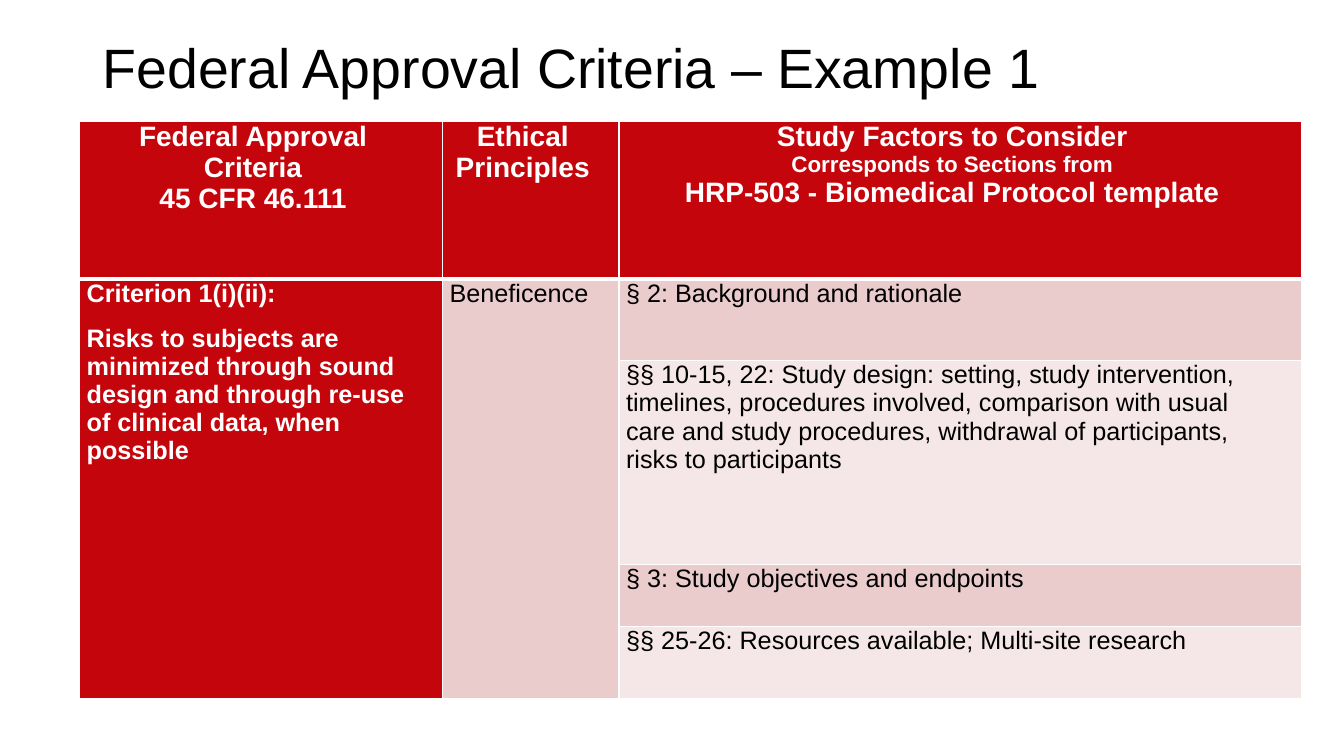
from pptx import Presentation
from pptx import util as u
from pptx.dml.color import RGBColor
from pptx.enum import text
from pptx.oxml import parse_xml
from pptx.oxml.ns import nsdecls

COLORS = {"red": "C5050C", "rose": "EACCCC", "blush": "F5E7E7",
          "white": "FFFFFF", "black": "000000"}
FONT = "Arial"
COLUMN_WIDTHS = [3.6, 1.75, 6.77]
ROW_HEIGHTS = [1.57, 0.81, 2.02, 0.62, 0.71]
HEADINGS = [
    [("Federal Approval Criteria", 20), ("45 CFR 46.111", 20)],
    [("Ethical Principles", 20)],
    [("Study Factors to Consider", 20), ("Corresponds to Sections from", 16),
     ("HRP-503 - Biomedical Protocol template", 20)],
]
CRITERION = [
    ("Criterion 1(i)(ii):", 18),
    ("Risks to subjects are minimized through sound design and through "
     "re-use of clinical data, when possible", 18),
]
STUDY_FACTORS = [
    "§ 2: Background and rationale",
    "§§ 10-15, 22: Study design: setting, study intervention, timelines, "
    "procedures involved, comparison with usual care and study procedures, "
    "withdrawal of participants, risks to participants",
    "§ 3: Study objectives and endpoints",
    "§§ 25-26: Resources available; Multi-site research",
]


def write(frame, lines, color="black", bold=False, align=text.PP_ALIGN.LEFT,
          gap=0, spacing=1.0):
    for index, (words, size) in enumerate(lines):
        paragraph = frame.paragraphs[0] if index == 0 else frame.add_paragraph()
        paragraph.alignment = align
        paragraph.line_spacing = spacing
        if index:
            paragraph.space_before = u.Pt(gap)
        run = paragraph.add_run()
        run.text = words
        run.font.name = FONT
        run.font.size = u.Pt(size)
        run.font.bold = bold
        run.font.color.rgb = RGBColor.from_string(COLORS[color])


def style_cell(cell, fill, bottom=1):
    cell.margin_left = u.Inches(0.07)
    cell.margin_right = u.Inches(0.23)
    cell.margin_top = cell.margin_bottom = 0
    cell.vertical_anchor = text.MSO_ANCHOR.TOP
    properties = cell._tc.get_or_add_tcPr()
    for side, points in (("L", 1), ("R", 1), ("T", 1), ("B", bottom)):
        properties.append(parse_xml(
            f'<a:ln{side} {nsdecls("a")} w="{u.Pt(points)}"><a:solidFill>'
            f'<a:srgbClr val="{COLORS["white"]}"/></a:solidFill></a:ln{side}>'))
    cell.fill.solid()
    cell.fill.fore_color.rgb = RGBColor.from_string(COLORS[fill])


def add_title(slide, left, top, width, height):
    frame = slide.shapes.add_textbox(
        u.Inches(left), u.Inches(top), u.Inches(width), u.Inches(height)).text_frame
    frame.word_wrap = True
    frame.vertical_anchor = text.MSO_ANCHOR.MIDDLE
    write(frame, [("Federal Approval Criteria – Example 1", 39.6)], spacing=0.9)


def add_criteria_table(slide, left, top):
    criteria = slide.shapes.add_table(
        len(ROW_HEIGHTS), len(COLUMN_WIDTHS), u.Inches(left), u.Inches(top),
        u.Inches(sum(COLUMN_WIDTHS)), u.Inches(sum(ROW_HEIGHTS))).table
    for column, width in zip(criteria.columns, COLUMN_WIDTHS):
        column.width = u.Inches(width)
    for row, height in zip(criteria.rows, ROW_HEIGHTS):
        row.height = u.Inches(height)

    for index, heading in enumerate(HEADINGS):
        cell = criteria.cell(0, index)
        style_cell(cell, "red", bottom=3)
        write(cell.text_frame, heading, color="white", bold=True,
              align=text.PP_ALIGN.CENTER)

    for index, factor in enumerate(STUDY_FACTORS, start=1):
        band = "rose" if index % 2 else "blush"
        for column, fill in enumerate(("red", "rose", band)):
            style_cell(criteria.cell(index, column), fill)
        write(criteria.cell(index, 2).text_frame, [(factor, 18)])

    last_row = len(STUDY_FACTORS)
    for column in (0, 1):
        criteria.cell(1, column).merge(criteria.cell(last_row, column))
    write(criteria.cell(1, 0).text_frame, CRITERION, color="white", bold=True, gap=12)
    write(criteria.cell(1, 1).text_frame, [("Beneficence", 18)])


def main():
    deck = Presentation()
    deck.slide_width = u.Inches(13.33)
    deck.slide_height = u.Inches(7.5)
    slide = deck.slides.add_slide(deck.slide_layouts[6])
    add_title(slide, 0.92, 0.35, 11.5, 0.7)
    add_criteria_table(slide, 0.79, 1.2)
    deck.save("out.pptx")


if __name__ == "__main__":
    main()
